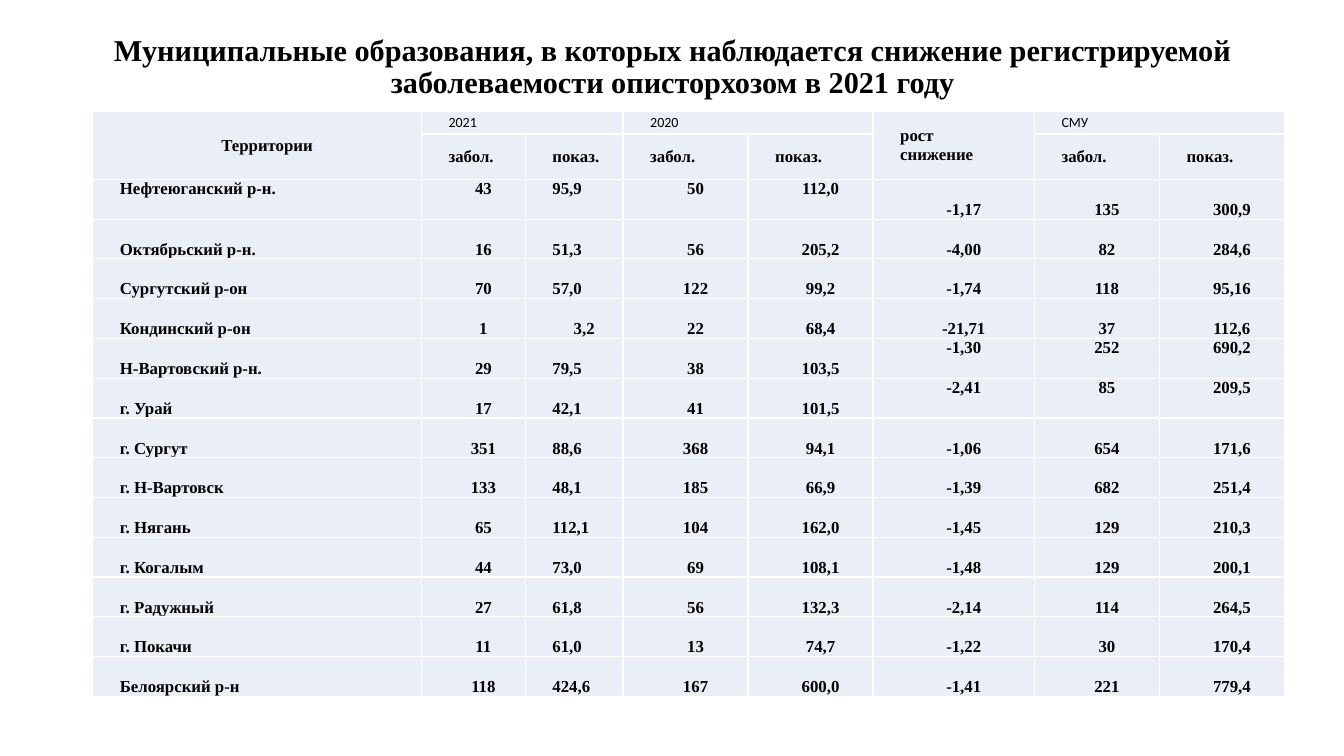
from dataclasses import dataclass
from lxml.etree import SubElement
from pptx import Presentation
from pptx.dml.color import RGBColor as Rgb
from pptx.enum.text import MSO_ANCHOR as Anc, MSO_AUTO_SIZE as Auto, PP_ALIGN as Align
from pptx.oxml.ns import qn
from pptx.util import Inches, Pt

WIDE, HIGH = Inches(13.33), Inches(7.5)
COLS = [3.26, 1.03, 0.97, 1.24, 1.24, 1.6, 1.24, 1.24]
HEADS = [0.22, 0.45]
GRID_HIGH = 5.8

TITLE = ("Муниципальные образования, в которых наблюдается снижение "
         "регистрируемой заболеваемости описторхозом в 2021 году\v")
TOP = ["Территории", "2021", "", "2020", "", "рост\nснижение", "СМУ", ""]
SUB = ["", "забол.", "показ.", "забол.", "показ.", "", "забол.", "показ."]
DATA = [
    ("Нефтеюганский р-н.", "43", "95,9", "50", "112,0", "-1,17", "135", "300,9"),
    ("Октябрьский р-н.", "16", "51,3", "56", "205,2", "-4,00", "82", "284,6"),
    ("Сургутский р-он", "70", "57,0", "122", "99,2", "-1,74", "118", "95,16"),
    ("Кондинский р-он", "1", "3,2", "22", "68,4", "-21,71", "37", "112,6"),
    ("Н-Вартовский р-н.", "29", "79,5", "38", "103,5", "-1,30", "252", "690,2"),
    ("г. Урай", "17", "42,1", "41", "101,5", "-2,41", "85", "209,5"),
    ("г. Сургут", "351", "88,6", "368", "94,1", "-1,06", "654", "171,6"),
    ("г. Н-Вартовск", "133", "48,1", "185", "66,9", "-1,39", "682", "251,4"),
    ("г. Нягань", "65", "112,1", "104", "162,0", "-1,45", "129", "210,3"),
    ("г. Когалым", "44", "73,0", "69", "108,1", "-1,48", "129", "200,1"),
    ("г. Радужный", "27", "61,8", "56", "132,3", "-2,14", "114", "264,5"),
    ("г. Покачи", "11", "61,0", "13", "74,7", "-1,22", "30", "170,4"),
    ("Белоярский р-н", "118", "424,6", "167", "600,0", "-1,41", "221", "779,4"),
]
SPANS = [((0, 0), (1, 0)), ((0, 1), (0, 2)), ((0, 3), (0, 4)),
         ((0, 5), (1, 5)), ((0, 6), (0, 7))]
HIGH_SET = {(0, c) for c in range(5)} | {(r, c) for r in (4, 5) for c in (5, 6, 7)}
MID_SET = {(3, 2)}


@dataclass(frozen=True)
class Theme:
    """Hold the colours and type styles of the slide."""
    ink: Rgb = Rgb(0, 0, 0)
    fill: Rgb = Rgb(0xEA, 0xEF, 0xF7)
    line: str = "FFFFFF"
    title = {"name": "Times New Roman", "size": Pt(21.6), "bold": True}
    body = {"name": "Times New Roman", "size": Pt(12), "bold": True}
    year = {"name": "Calibri", "size": Pt(10), "bold": False}


LOOK = Theme()


def put(obj, vals):
    """Set each attribute named in a dict."""
    for key, val in vals.items():
        setattr(obj, key, val)


def write(frame, text, font, para):
    """Fill a text frame and format its paragraphs and runs."""
    frame.text = text
    for par in frame.paragraphs:
        put(par, para)
        for run in par.runs:
            put(run.font, font)
            run.font.color.rgb = LOOK.ink


def edge(cell):
    """Draw thin borders round a cell."""
    props = cell._tc.get_or_add_tcPr()
    for at, side in enumerate(("lnL", "lnR", "lnT", "lnB")):
        line = SubElement(props, qn("a:" + side), w=str(Pt(1)))
        fill = SubElement(line, qn("a:solidFill"))
        SubElement(fill, qn("a:srgbClr"), val=LOOK.line)
        props.remove(line)
        props.insert(at, line)


def fill_cell(cell, text, font, align, anchor):
    """Write and style one table cell."""
    write(cell.text_frame, text, font, {"alignment": align})
    for par in cell.text_frame.paragraphs:
        put_in = par._p.get_or_add_pPr()
        put_in.set("marL", "0")
        put_in.set("indent", str(Inches(0.2)))
    put(cell, {"margin_left": Inches(0.07), "margin_right": Inches(0.07),
               "margin_top": 0, "margin_bottom": 0, "vertical_anchor": anchor})
    cell.fill.solid()
    cell.fill.fore_color.rgb = LOOK.fill
    edge(cell)


def add_title(slide):
    """Place and format the title."""
    head = slide.shapes.title
    put(head, {"left": int(WIDE * 0.069), "top": int(HIGH * 0.053),
               "width": int(WIDE * 0.863), "height": int(HIGH * 0.121)})
    write(head.text_frame, TITLE, LOOK.title,
          {"alignment": Align.CENTER, "line_spacing": 0.9})
    put(head.text_frame, {"word_wrap": True, "auto_size": Auto.NONE,
                          "vertical_anchor": Anc.MIDDLE})
    for gap in head.text_frame.paragraphs[0]._p.findall(qn("a:br")):
        SubElement(gap, qn("a:rPr"), sz="2160", b="1")


def add_grid(slide):
    """Build the table of territories."""
    rows = [TOP, SUB, *DATA]
    grid = slide.shapes.add_table(
        len(rows), len(COLS), int(WIDE * 0.069), int(HIGH * 0.148),
        Inches(sum(COLS)), Inches(GRID_HIGH)).table
    put(grid, {"first_row": False, "horz_banding": False})
    step = (GRID_HIGH - sum(HEADS)) / len(DATA)
    for col, size in zip(grid.columns, COLS):
        col.width = Inches(size)
    for row, size in zip(grid.rows, HEADS + [step] * len(DATA)):
        row.height = Inches(size)
    for r, row in enumerate(rows):
        for c, text in enumerate(row):
            spot = (r - len(HEADS), c)
            if r < len(HEADS):
                align = Align.JUSTIFY if c else Align.CENTER
                anchor = Anc.MIDDLE
            else:
                left = c in (0, 2) and spot not in MID_SET
                align = Align.JUSTIFY if left else Align.CENTER
                anchor = Anc.TOP if spot in HIGH_SET else Anc.BOTTOM
            font = LOOK.year if r == 0 and c not in (0, 5) else LOOK.body
            fill_cell(grid.cell(r, c), text, font, align, anchor)
    for start, end in SPANS:
        grid.cell(*start).merge(grid.cell(*end))


def main():
    """Build and save the slide."""
    deck = Presentation()
    put(deck, {"slide_width": WIDE, "slide_height": HIGH})
    slide = deck.slides.add_slide(deck.slide_layouts[5])
    add_title(slide)
    add_grid(slide)
    deck.save("out.pptx")


if __name__ == "__main__":
    main()
